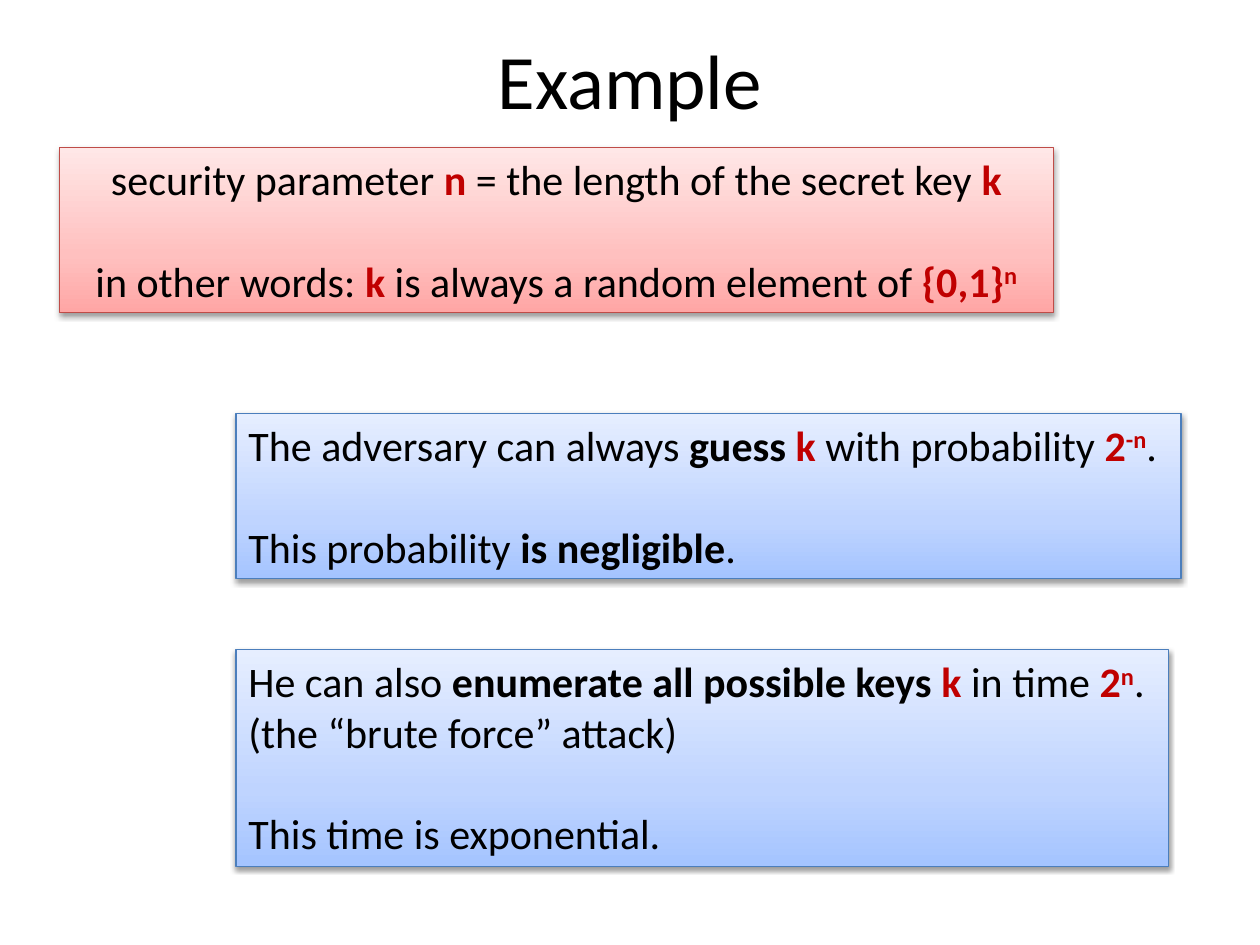
from copy import deepcopy
from dataclasses import dataclass

from lxml.etree import SubElement
from pptx import Presentation
from pptx.dml.color import RGBColor
from pptx.enum.shapes import MSO_SHAPE
from pptx.enum.text import MSO_ANCHOR, PP_ALIGN
from pptx.oxml.ns import qn
from pptx.util import Pt

COLORS = {"text": "000000", "symbol": "C00000", "shadow": "000000",
          "red_line": "BF4C48", "blue_line": "4B7EBC"}
GRADIENTS = {"red": ("FFA6A5", "FFC0BF", "FFE7E7"),
             "blue": ("A4C4FF", "BFD4FF", "E6EEFF")}
GRADIENT_POSITIONS = (0, 0.35, 1)
BLANK_LINE = 29.3

STYLES = {
    "plain": {"bold": False, "color": "text", "baseline": 0},
    "bold": {"bold": True, "color": "text", "baseline": 0},
    "symbol": {"bold": True, "color": "symbol", "baseline": 0},
    "exponent": {"bold": True, "color": "symbol", "baseline": 30000},
}


@dataclass
class Line:
    runs: list[tuple[str, str]]
    space_before: float = 0


@dataclass
class Box:
    left: float
    top: float
    width: float
    height: float
    theme: str
    alignment: PP_ALIGN
    lines: list[Line]


BOXES = [
    Box(33.84, 84.24, 568.08, 94.5, "red", PP_ALIGN.CENTER, [
        Line([("security parameter ", "plain"), ("n", "symbol"),
              (" = the length of the secret key ", "plain"), ("k", "symbol")]),
        Line([("in other words: ", "plain"), ("k ", "symbol"),
              ("is always a random element of ", "plain"),
              ("{0,1}", "symbol"), ("n", "exponent")], BLANK_LINE),
    ]),
    Box(134.9, 236.2, 540, 94.5, "blue", PP_ALIGN.LEFT, [
        Line([("The adversary can always ", "plain"), ("guess ", "bold"),
              ("k", "symbol"), (" with probability ", "plain"),
              ("2", "symbol"), ("-n", "exponent"), (".", "plain")]),
        Line([("This probability ", "plain"), ("is negligible", "bold"),
              (".", "plain")], BLANK_LINE),
    ]),
    Box(134.9, 371.2, 532.8, 123.8, "blue", PP_ALIGN.LEFT, [
        Line([("He can also ", "plain"), ("enumerate all possible keys ", "bold"),
              ("k ", "symbol"), ("in time ", "plain"),
              ("2", "symbol"), ("n", "exponent"), (".", "plain")]),
        Line([("(the “brute force” attack)", "plain")]),
        Line([("This time is exponential.", "plain")], BLANK_LINE),
    ]),
]


def add_run(paragraph, text: str, style: str, size: float) -> None:
    run = paragraph.add_run()
    run.text = text
    values = STYLES[style]
    formats = {"name": "Calibri", "size": Pt(size), "bold": values["bold"]}
    for attribute, value in formats.items():
        setattr(run.font, attribute, value)
    run.font.color.rgb = RGBColor.from_string(COLORS[values["color"]])
    if values["baseline"]:
        run._r.get_or_add_rPr().set("baseline", str(values["baseline"]))


def fill_with_gradient(shape, colors: tuple[str, ...]) -> None:
    """Fill from bottom to top with three colour stops."""
    shape.fill.gradient()
    shape.fill.gradient_angle = 90
    stop_list = shape._element.spPr.find(qn("a:gradFill")).find(qn("a:gsLst"))
    stop_list.insert(1, deepcopy(stop_list[0]))
    for stop, position, color in zip(shape.fill.gradient_stops,
                                     GRADIENT_POSITIONS, colors):
        stop.position = position
        stop.color.rgb = RGBColor.from_string(color)


def add_drop_shadow(shape) -> None:
    shape.shadow.inherit = False
    effects = shape._element.spPr.find(qn("a:effectLst"))
    shadow = SubElement(effects, qn("a:outerShdw"), blurRad=str(Pt(3.1)),
                        dist=str(Pt(1.6)), dir="5400000", rotWithShape="0")
    color = SubElement(shadow, qn("a:srgbClr"), val=COLORS["shadow"])
    SubElement(color, qn("a:alpha"), val="38000")


def add_title(slide, text: str) -> None:
    title = slide.shapes.add_textbox(Pt(36), Pt(0), Pt(648), Pt(90))
    title.text_frame.word_wrap = True
    title.text_frame.vertical_anchor = MSO_ANCHOR.MIDDLE
    paragraph = title.text_frame.paragraphs[0]
    paragraph.alignment = PP_ALIGN.CENTER
    add_run(paragraph, text, "plain", 44)


def add_box(slide, box: Box) -> None:
    shape = slide.shapes.add_shape(MSO_SHAPE.RECTANGLE, Pt(box.left), Pt(box.top),
                                   Pt(box.width), Pt(box.height))
    fill_with_gradient(shape, GRADIENTS[box.theme])
    shape.line.color.rgb = RGBColor.from_string(COLORS[f"{box.theme}_line"])
    shape.line.width = Pt(0.75)
    add_drop_shadow(shape)

    frame = shape.text_frame
    frame.word_wrap = True
    frame.vertical_anchor = MSO_ANCHOR.TOP
    for index, line in enumerate(box.lines):
        paragraph = frame.add_paragraph() if index else frame.paragraphs[0]
        paragraph.alignment = box.alignment
        paragraph.space_before = Pt(line.space_before)
        for text, style in line.runs:
            add_run(paragraph, text, style, 24)


def main() -> None:
    presentation = Presentation()
    presentation.slide_width = Pt(720)
    presentation.slide_height = Pt(540)
    slide = presentation.slides.add_slide(presentation.slide_layouts[6])
    add_title(slide, "Example")
    for box in BOXES:
        add_box(slide, box)
    presentation.save("out.pptx")


if __name__ == "__main__":
    main()
